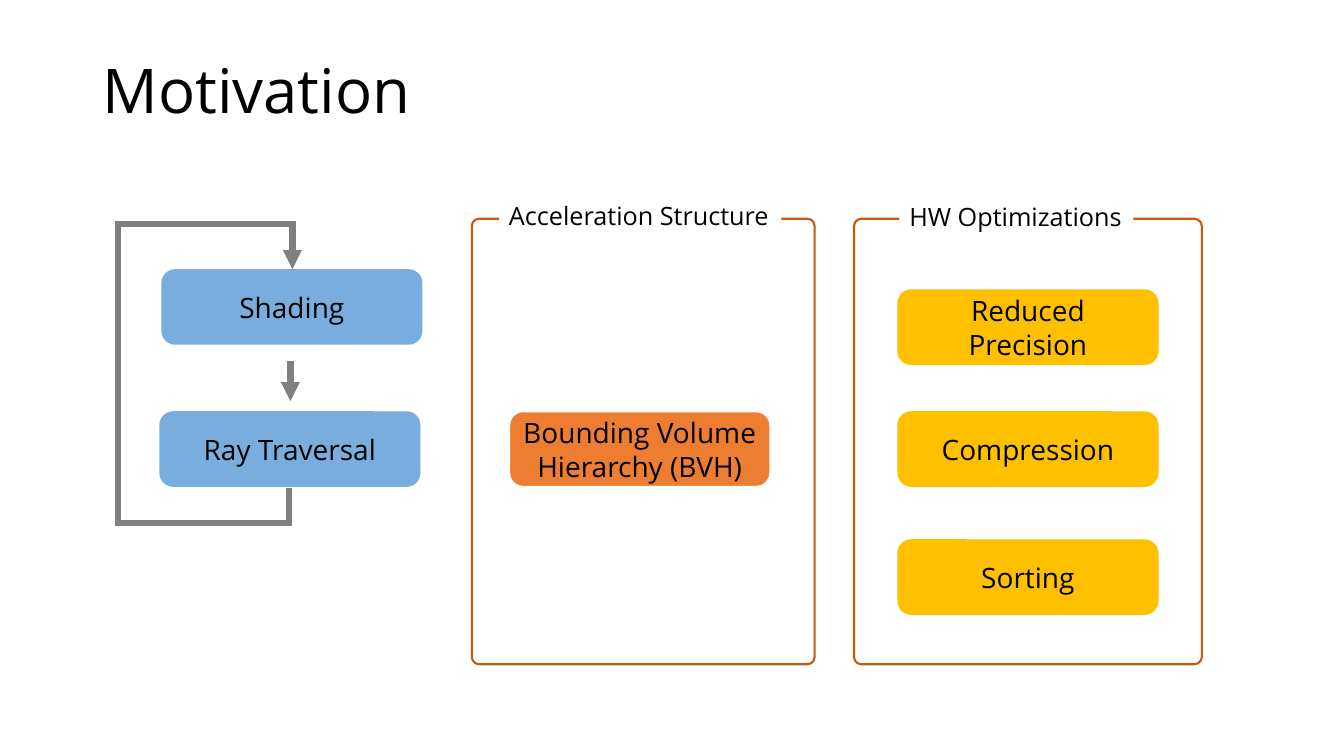
"""Build the Motivation slide: a ray tracing loop beside two framed groups of techniques."""
from typing import NamedTuple

from lxml import etree
from pptx import Presentation
from pptx.dml.color import RGBColor as RGB
from pptx.dml.line import LineFormat
from pptx.enum.shapes import MSO_CONNECTOR as CONN, MSO_SHAPE as SHAPE
from pptx.enum.text import MSO_ANCHOR as ANCHOR, PP_ALIGN as ALIGN
from pptx.oxml.ns import qn
from pptx.shapes.autoshape import Shape
from pptx.slide import Slide
from pptx.util import Inches, Pt

FONT = "Open Sans"
COLORS = {
    "text": "000000",
    "white": "FFFFFF",
    "blue": "79ADDD",
    "gold": "FFC000",
    "orange": "ED7D31",
    "frame": "C55A11",
    "arrow": "808080",
}
BOX_W, BOX_H = 2.59, 0.75
FRAME_TOP, FRAME_H = 2.17, 4.42


class Box(NamedTuple):
    text: str
    left: float
    top: float
    fill: str
    line: str | None = None


class Group(NamedTuple):
    left: float
    width: float
    label: str
    label_left: float
    label_top: float
    label_width: float


BOXES = [
    Box("Shading", 1.6, 2.67, "blue"),
    Box("Ray Traversal", 1.58, 4.08, "blue"),
    Box("Bounding Volume Hierarchy (BVH)", 5.05, 4.08, "orange", "white"),
    Box("Reduced Precision", 8.9, 2.87, "gold"),
    Box("Compression", 8.9, 4.08, "gold"),
    Box("Sorting", 8.9, 5.35, "gold"),
]
GROUPS = [
    Group(4.68, 3.4, "Acceleration Structure", 4.95, 1.94, 2.8),
    Group(8.47, 3.45, "HW Optimizations", 8.92, 1.95, 2.32),
]
LOOP = [(2.87, 4.84), (2.87, 5.19), (1.17, 5.19), (1.17, 2.22), (2.9, 2.22), (2.9, 2.67)]


def rgb(name: str) -> RGB:
    return RGB.from_string(COLORS[name])


def set_text(sp: Shape, text: str, size: int) -> None:
    tf = sp.text_frame
    tf.text = text
    p = tf.paragraphs[0]
    p.alignment = ALIGN.LEFT
    font = p.runs[0].font
    font.name, font.size = FONT, Pt(size)
    font.color.rgb = rgb("text")


def add_block(s: Slide, kind: SHAPE, left: float, top: float, width: float,
              height: float, fill: str, line: str | None = None) -> Shape:
    sp = s.shapes.add_shape(kind, Inches(left), Inches(top), Inches(width), Inches(height))
    sp.shadow.inherit = False
    sp.fill.solid()
    sp.fill.fore_color.rgb = rgb(fill)
    if line:
        sp.line.color.rgb = rgb(line)
        sp.line.width = Pt(1.5)
    else:
        sp.line.fill.background()
    return sp


def add_title(s: Slide, text: str) -> None:
    sp = s.shapes.add_textbox(Inches(0.92), Inches(0.4), Inches(11.5), Inches(1.05))
    sp.text_frame.word_wrap = True
    sp.text_frame.vertical_anchor = ANCHOR.MIDDLE
    set_text(sp, text, 44)
    sp.text_frame.paragraphs[0].line_spacing = 0.9


def add_group(s: Slide, group: Group) -> None:
    frame = add_block(s, SHAPE.ROUNDED_RECTANGLE, group.left, FRAME_TOP,
                      group.width, FRAME_H, "white", "frame")
    frame.adjustments[0] = 0.021
    label = add_block(s, SHAPE.RECTANGLE, group.label_left, group.label_top,
                      group.label_width, 0.4, "white")
    set_text(label, group.label, 18)
    label.text_frame.word_wrap = False
    label.text_frame.vertical_anchor = ANCHOR.TOP


def add_box(s: Slide, box: Box) -> None:
    sp = add_block(s, SHAPE.ROUNDED_RECTANGLE, box.left, box.top, BOX_W, BOX_H,
                   box.fill, box.line)
    sp.adjustments[0] = 0.184
    set_text(sp, box.text, 20)
    sp.text_frame.word_wrap = True
    sp.text_frame.vertical_anchor = ANCHOR.MIDDLE
    sp.text_frame.paragraphs[0].alignment = ALIGN.CENTER


def style_arrow(line: LineFormat) -> None:
    line.color.rgb = rgb("arrow")
    line.width = Pt(4.5)
    ln = line._get_or_add_ln()
    etree.SubElement(ln, qn("a:miter"), lim="800000")
    etree.SubElement(ln, qn("a:tailEnd"), type="triangle")


def add_arrow(s: Slide, x: float, top: float, bottom: float) -> None:
    cxn = s.shapes.add_connector(CONN.STRAIGHT, Inches(x), Inches(top),
                                 Inches(x), Inches(bottom))
    style_arrow(cxn.line)
    etree.SubElement(cxn._element.spPr, qn("a:effectLst"))


def add_loop(s: Slide, points: list[tuple[float, float]]) -> None:
    start, *rest = [(Inches(x), Inches(y)) for x, y in points]
    builder = s.shapes.build_freeform(*start)
    builder.add_line_segments(rest, close=False)
    sp = builder.convert_to_shape()
    sp.shadow.inherit = False
    sp.fill.background()
    style_arrow(sp.line)


def main() -> None:
    prs = Presentation()
    prs.slide_width, prs.slide_height = Inches(13.33), Inches(7.5)
    s = prs.slides.add_slide(prs.slide_layouts[6])
    add_title(s, "Motivation")
    for group in GROUPS:
        add_group(s, group)
    for box in BOXES:
        add_box(s, box)
    add_arrow(s, 2.88, 3.58, 3.98)
    add_loop(s, LOOP)
    prs.save("out.pptx")


if __name__ == "__main__":
    main()
